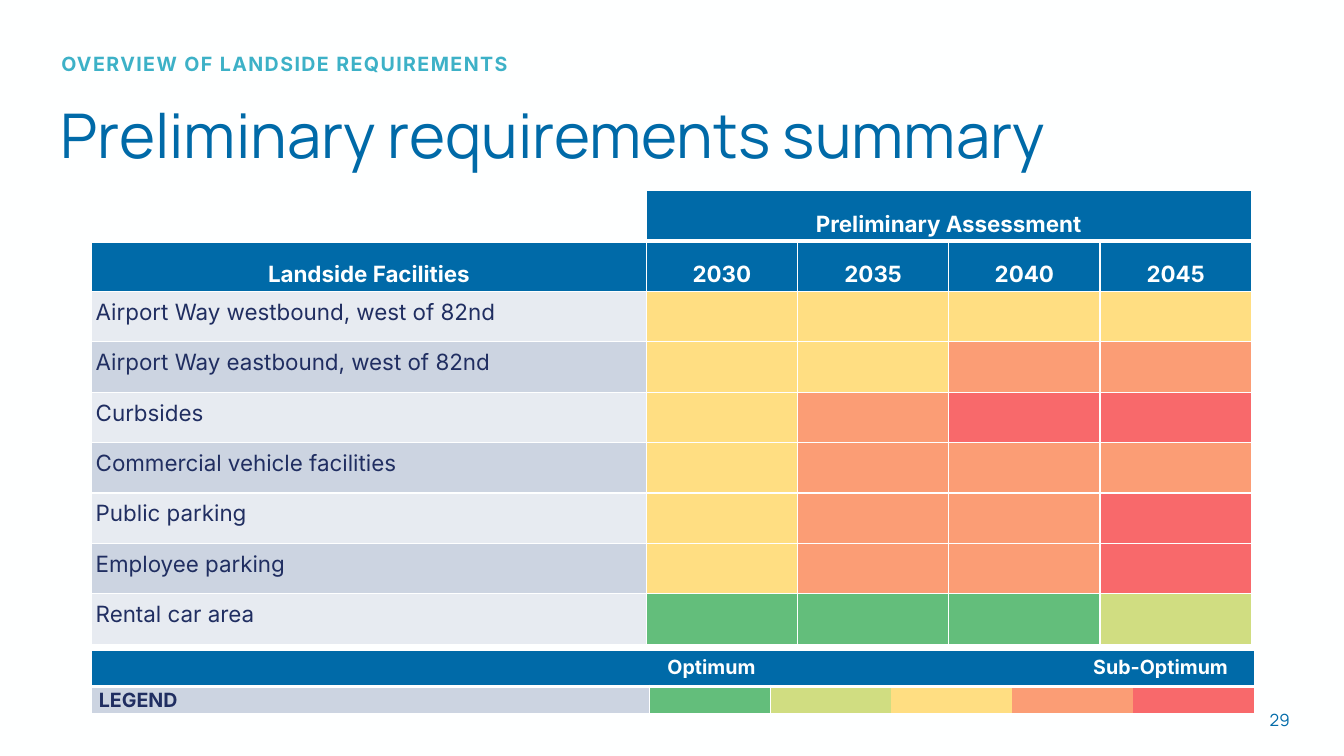
from pptx import Presentation
from pptx import util as u
from pptx.dml.color import RGBColor
from pptx.enum import text
from pptx.oxml.ns import qn
from lxml import etree

COLORS = {
    "white": "FEFFFF", "blue": "006AA8", "teal": "3DB1C7", "navy": "202E61",
    "pale": "E7EBF1", "grey": "CCD4E1",
    "G": "63BE7B", "L": "D0DD81", "Y": "FFDE82", "O": "FB9D75", "R": "F8696B",
}
NO_STYLE = "{2D5ABB26-0587-4C30-8999-92F81FD0307C}"
LEFT, CENTER, RIGHT = (text.PP_ALIGN.LEFT, text.PP_ALIGN.CENTER, text.PP_ALIGN.RIGHT)
MIDDLE, BOTTOM = text.MSO_ANCHOR.MIDDLE, text.MSO_ANCHOR.BOTTOM

YEARS = ["2030", "2035", "2040", "2045"]
# One letter per year, from G (optimum) to R (sub-optimum)
FACILITIES = [
    ("Airport Way westbound, west of 82nd", "YYYY"),
    ("Airport Way eastbound, west of 82nd", "YYOO"),
    ("Curbsides", "YORR"),
    ("Commercial vehicle facilities", "YOOO"),
    ("Public parking", "YOOR"),
    ("Employee parking", "YOOR"),
    ("Rental car area", "GGGL"),
]
SCALE = "GLYOR"


def rgb(name):
    return RGBColor.from_string(COLORS[name])


def set_font(p, name, size, color, bold=False):
    p.font.name, p.font.size, p.font.bold = name, u.Pt(size), bold
    p.font.color.rgb = rgb(color)


def add_text(slide, box, words, name, size, color, bold=False, align=LEFT,
             anchor=text.MSO_ANCHOR.TOP, spacing=None):
    tf = slide.shapes.add_textbox(*map(u.Inches, box)).text_frame
    tf.word_wrap = True
    tf.vertical_anchor = anchor
    p = tf.paragraphs[0]
    r = p.add_run()
    r.text = words
    p.alignment, p.line_spacing = align, 0.9
    set_font(p, name, size, color, bold)
    if spacing:
        r.font._element.set("spc", str(spacing * 100))


def add_table(slide, box, widths, heights):
    frame = slide.shapes.add_table(len(heights), len(widths), *map(u.Inches, box))
    table = frame.table
    table.first_row = table.horz_banding = False
    table._tbl.tblPr.find(qn("a:tableStyleId")).text = NO_STYLE
    for column, width in zip(table.columns, widths):
        column.width = u.Inches(width)
    for row, height in zip(table.rows, heights):
        row.height = u.Inches(height)
    return table


def style_cell(cell, fill=None, **borders):
    """Borders are given as L, R, T, B widths in points."""
    tcPr = cell._tc.get_or_add_tcPr()
    for side in "LRTB":
        if side in borders:
            ln = etree.SubElement(tcPr, qn(f"a:ln{side}"), w=str(u.Pt(borders[side])))
            solid = etree.SubElement(ln, qn("a:solidFill"))
            etree.SubElement(solid, qn("a:srgbClr"), val=COLORS["white"])
    if fill:
        cell.fill.solid()
        cell.fill.fore_color.rgb = rgb(fill)
    else:
        cell.fill.background()
    # Small end mark, so that empty cells keep their row height
    end = cell.text_frame.paragraphs[0]._p.get_or_add_endParaRPr()
    end.set("sz", "1000")


def write_cell(cell, words, size, color, bold, anchor, margins, align=LEFT):
    cell.vertical_anchor = anchor
    cell.margin_left = cell.margin_right = u.Inches(margins[0])
    cell.margin_top = cell.margin_bottom = u.Inches(margins[1])
    p = cell.text_frame.paragraphs[0]
    p.add_run().text = words
    p.alignment = align
    set_font(p, "Inter", size, color, bold)
    return p


def add_assessment(slide):
    table = add_table(slide, (0.91, 1.89, 11.5, 4.5), [5.5] + [1.5] * 4, [0.5] * 9)

    def write(row, col, words, color, bold, anchor, align):
        p = write_cell(table.cell(row, col), words, 16, color, bold, anchor,
                       (0.04, 0.03), align)
        p.line_spacing, p.space_after = u.Pt(13), u.Pt(6)

    # Fills and borders
    fills = [[None] + ["blue"] * 4, ["blue"] * 5]
    for i, (_, ratings) in enumerate(FACILITIES):
        fills.append([("pale", "grey")[i % 2], *ratings])
    for row, row_fills in enumerate(fills):
        for col, fill in enumerate(row_fills):
            style_cell(table.cell(row, col), fill, L=1, R=1,
                       T=3 if row == 1 else 1, B=3 if row == 0 else 1)
    table.cell(0, 1).merge(table.cell(0, 4))

    # Headings and facility names
    write(0, 1, "Preliminary Assessment", "white", True, BOTTOM, CENTER)
    for col, heading in enumerate(["Landside Facilities"] + YEARS):
        write(1, col, heading, "white", True, BOTTOM, CENTER)
    for row, (facility, _) in enumerate(FACILITIES, 2):
        write(row, 0, facility, "navy", False, MIDDLE, LEFT)


def add_legend(slide):
    table = add_table(slide, (0.91, 6.44, 11.53, 0.62), [5.53] + [1.2] * 5, [0.37, 0.25])
    for col, fill in enumerate(["grey", *SCALE]):
        style_cell(table.cell(0, col), "blue", T=3, B=3)
        sides = {0: {"R": 1}, 1: {"L": 1}}.get(col, {})
        style_cell(table.cell(1, col), fill, T=3, **sides)
    write_cell(table.cell(1, 0), "LEGEND", 14, "navy", True, MIDDLE, (0.07, 0))

    # Names of the two ends of the scale
    for first, last, words, margin, align in (
            (1, 2, "Optimum", 0.18, LEFT), (3, 5, "Sub-Optimum", 0.26, RIGHT)):
        table.cell(0, first).merge(table.cell(0, last))
        write_cell(table.cell(0, first), words, 14, "white", True, MIDDLE,
                   (margin, 0), align)


def main():
    prs = Presentation()
    prs.slide_width, prs.slide_height = u.Inches(13.33), u.Inches(7.5)
    slide = prs.slides.add_slide(prs.slide_layouts[6])
    slide.background.fill.solid()
    slide.background.fill.fore_color.rgb = rgb("white")

    # Headings and page number
    add_text(slide, (9.42, 6.95, 3.47, 0.4), "29", "Manrope", 12, "blue",
             align=RIGHT, anchor=MIDDLE)
    add_text(slide, (0.5, 1, 11.92, 0.77), "Preliminary requirements summary",
             "Manrope", 44, "blue")
    add_text(slide, (0.51, 0.49, 6.5, 0.61), "OVERVIEW OF LANDSIDE REQUIREMENTS",
             "Inter", 14, "teal", bold=True, spacing=1)

    # Tables
    add_assessment(slide)
    add_legend(slide)
    prs.save("out.pptx")


if __name__ == "__main__":
    main()
